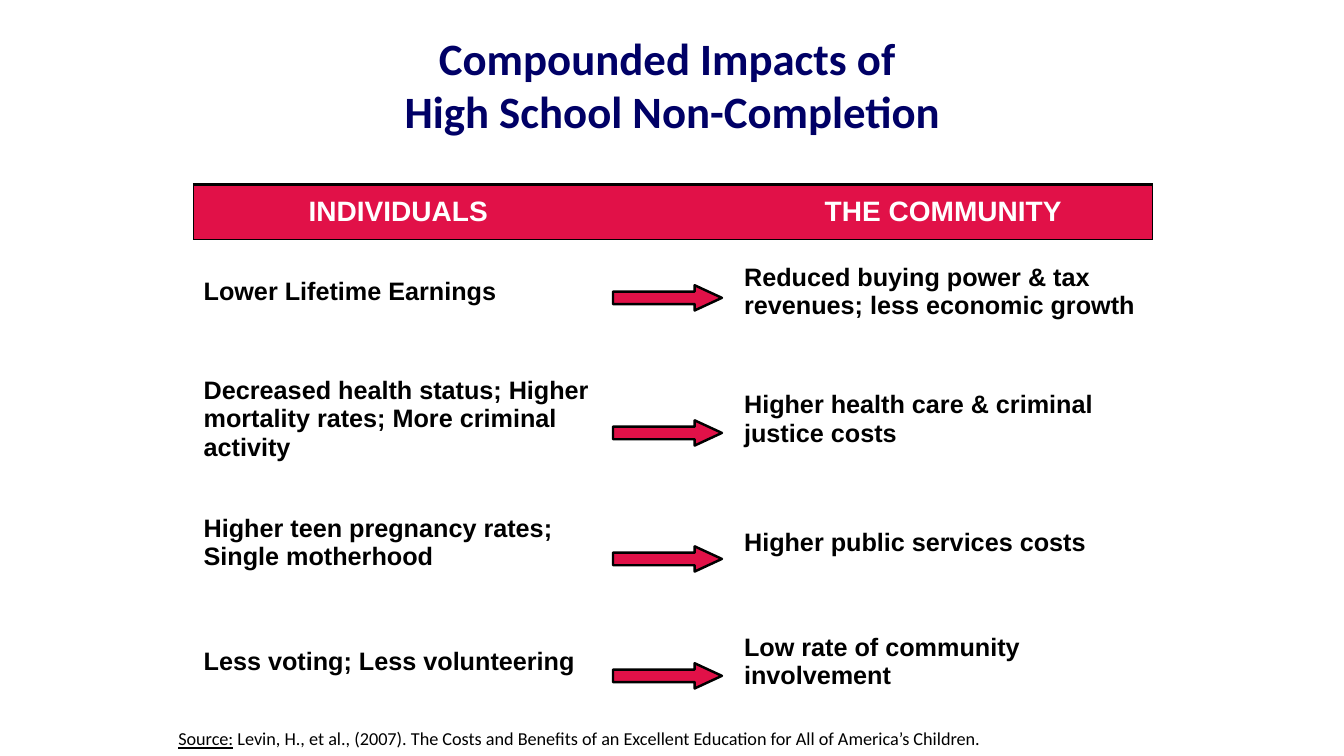
from dataclasses import dataclass

import lxml.etree
import pptx
import pptx.dml.color
import pptx.enum.shapes
import pptx.enum.text
import pptx.oxml.ns
import pptx.util

Inches = pptx.util.Inches
Pt = pptx.util.Pt
qn = pptx.oxml.ns.qn
ALIGN = pptx.enum.text.PP_ALIGN
ANCHOR = pptx.enum.text.MSO_ANCHOR

COLORS = {"navy": "000066", "red": "E11148", "black": "000000", "white": "FFFFFF"}
NO_GRID_STYLE = "{2D5ABB26-0587-4C30-8999-92F81FD0307C}"
COLUMN_WIDTHS = (4.06, 1.3, 4.15)
HEADER_HEIGHT = 0.55
SPACER_HEIGHT = 0.23


@dataclass
class Impact:
    individual: str
    community: str
    row_height: float
    arrow_top: float


IMPACTS = [
    Impact("Lower Lifetime Earnings",
           "Reduced buying power & tax revenues; less economic growth", 1.03, 2.83),
    Impact("Decreased health status; Higher mortality rates; More criminal activity",
           "Higher health care & criminal justice costs", 1.03, 4.17),
    Impact("Higher teen pregnancy rates; Single motherhood",
           "Higher public services costs", 0.95, 5.42),
    Impact("Less voting; Less volunteering",
           "Low rate of community involvement", 0.95, 6.58),
]


def rgb(name: str) -> pptx.dml.color.RGBColor:
    return pptx.dml.color.RGBColor.from_string(COLORS[name])


def add_span(para, text: str, font: str, size: float, color: str,
             bold: bool = False, underline: bool = False) -> None:
    span = para.add_run()
    span.text = text
    span.font.name = font
    span.font.size = Pt(size)
    span.font.color.rgb = rgb(color)
    span.font.bold = bold
    span.font.underline = underline


def add_border(cell, side: str, width: float) -> None:
    properties = cell._tc.get_or_add_tcPr()
    line = lxml.etree.SubElement(properties, qn(f"a:ln{side}"), w=str(Pt(width)))
    fill = lxml.etree.SubElement(line, qn("a:solidFill"))
    lxml.etree.SubElement(fill, qn("a:srgbClr"), val=COLORS["black"])


def fill_cell(cell, text: str, size: float, color: str, align) -> None:
    cell.vertical_anchor = ANCHOR.MIDDLE
    para = cell.text_frame.paragraphs[0]
    para.alignment = align
    add_span(para, text, "Arial", size, color, bold=True)


def add_title(page) -> None:
    title = page.shapes.title
    title.left, title.top = Inches(1.92), Inches(0.25)
    title.width, title.height = Inches(9.5), Inches(1.17)
    frame = title.text_frame
    frame.word_wrap = True
    frame.auto_size = pptx.enum.text.MSO_AUTO_SIZE.NONE
    frame.vertical_anchor = ANCHOR.TOP
    for index, text in enumerate(("Compounded Impacts of ", "High School Non-Completion")):
        para = frame.add_paragraph() if index else frame.paragraphs[0]
        para.alignment = ALIGN.CENTER
        para.space_before = Pt(0)
        add_span(para, text, "Calibri", 32, "navy", bold=True)


def add_source(page) -> None:
    box = page.shapes.add_textbox(Inches(1.67), Inches(7.17), Inches(10), Inches(0.32))
    box.text_frame.word_wrap = True
    para = box.text_frame.paragraphs[0]
    add_span(para, "Source:", "Calibri", 13, "black", underline=True)
    add_span(para, " Levin, H., et al., (2007). The Costs and Benefits of an Excellent "
             "Education for All of America’s Children.", "Calibri", 13, "black")


def add_impact_table(page) -> None:
    heights = [HEADER_HEIGHT]
    for index, impact in enumerate(IMPACTS):
        heights += [SPACER_HEIGHT, impact.row_height] if index else [impact.row_height]
    table = page.shapes.add_table(
        len(heights), len(COLUMN_WIDTHS), Inches(1.92), Inches(1.83),
        Inches(sum(COLUMN_WIDTHS)), Inches(sum(heights))).table
    table.first_row = table.horz_banding = False
    table._tbl.tblPr.find(qn("a:tableStyleId")).text = NO_GRID_STYLE
    for column, width in zip(table.columns, COLUMN_WIDTHS):
        column.width = Inches(width)
    for row, height in zip(table.rows, heights):
        row.height = Inches(height)

    # Header band, outlined as one bar
    for index, text in enumerate(("INDIVIDUALS", "", "THE COMMUNITY")):
        cell = table.cell(0, index)
        if index == 0:
            add_border(cell, "L", 1)
        if index == 2:
            add_border(cell, "R", 1)
        add_border(cell, "T", 2.25)
        add_border(cell, "B", 1)
        cell.fill.solid()
        cell.fill.fore_color.rgb = rgb("red")
        if text:
            fill_cell(cell, text, 20, "white", ALIGN.CENTER)

    # Impacts on odd rows, thin spacers between them
    for row_index in range(1, len(heights)):
        for cell in table.rows[row_index].cells:
            cell.fill.background()
            if row_index % 2 == 0:
                para = cell.text_frame.paragraphs[0]
                lxml.etree.SubElement(para._p, qn("a:endParaRPr"), sz="800")
    for index, impact in enumerate(IMPACTS):
        for column, text in ((0, impact.individual), (2, impact.community)):
            fill_cell(table.cell(2 * index + 1, column), text, 18, "black", ALIGN.LEFT)


def add_arrow(page, top: float) -> None:
    arrow = page.shapes.add_shape(pptx.enum.shapes.MSO_SHAPE.RIGHT_ARROW,
                                  Inches(6.08), Inches(top), Inches(1.08), Inches(0.25))
    arrow.adjustments[0] = 0.5
    arrow.adjustments[1] = 1.08
    arrow.shadow.inherit = False
    arrow.fill.solid()
    arrow.fill.fore_color.rgb = rgb("red")
    arrow.line.color.rgb = rgb("black")
    arrow.line.width = Pt(1.75)


def main() -> None:
    deck = pptx.Presentation()
    deck.slide_width, deck.slide_height = Inches(13.33), Inches(7.5)
    page = deck.slides.add_slide(deck.slide_layouts[5])
    add_title(page)
    add_source(page)
    add_impact_table(page)
    for impact in IMPACTS:
        add_arrow(page, impact.arrow_top)
    deck.save("out.pptx")


if __name__ == "__main__":
    main()
